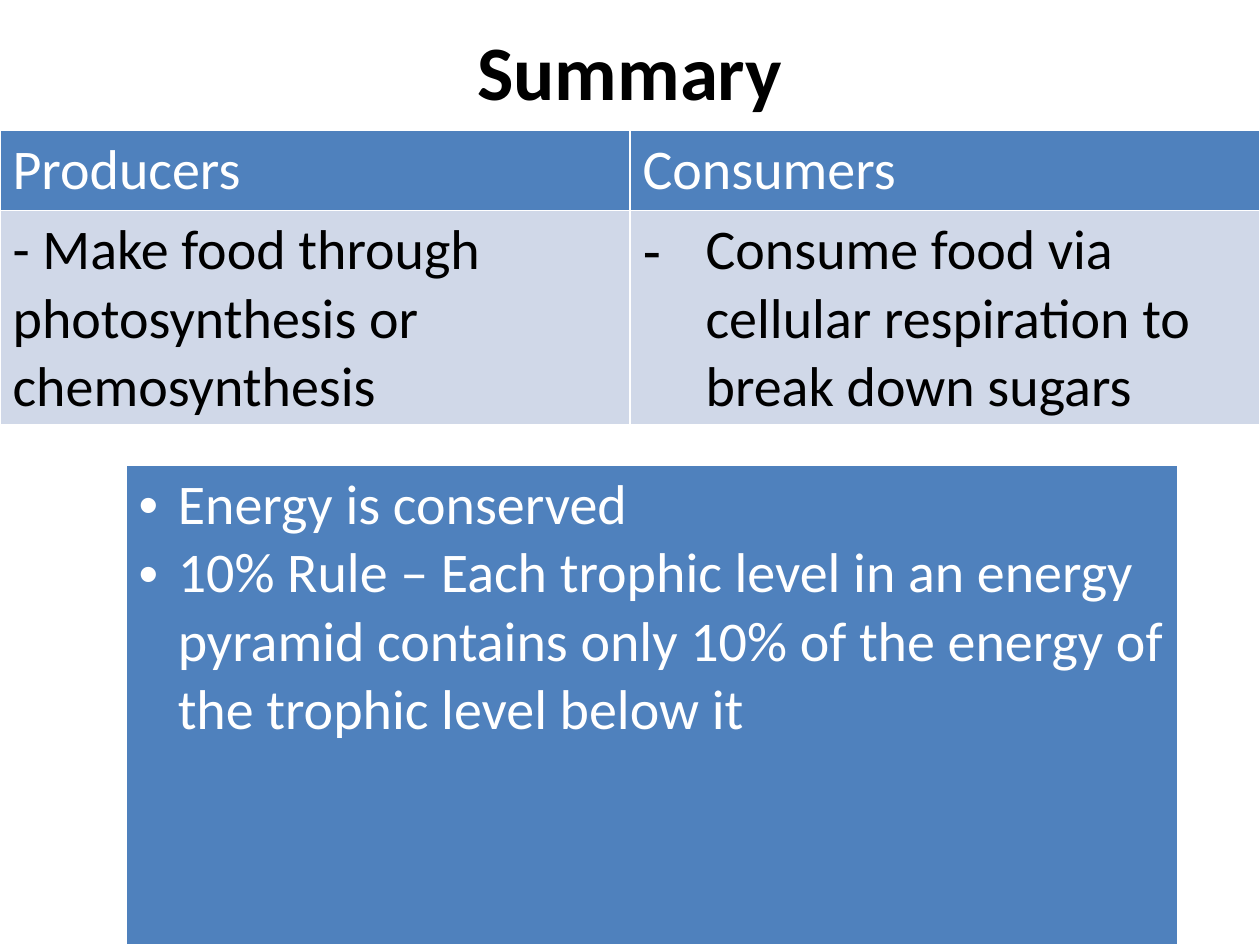
from dataclasses import dataclass

import pptx
import pptx.dml.color
import pptx.enum.text
import pptx.oxml.ns
import pptx.slide
import pptx.table
import pptx.text.text
import pptx.util
from lxml import etree

Cm = pptx.util.Cm
Pt = pptx.util.Pt
RGBColor = pptx.dml.color.RGBColor
qn = pptx.oxml.ns.qn

WHITE = RGBColor(0xFF, 0xFF, 0xFF)
BLACK = RGBColor(0, 0, 0)
BLUE = RGBColor(0x4F, 0x81, 0xBD)
PALE_BLUE = RGBColor(0xD0, 0xD8, 0xE8)
FONT = "Calibri"


@dataclass(frozen=True)
class Entry:
    lines: tuple[str, ...]
    fill: RGBColor
    color: RGBColor
    bullet: str = ""
    indent: float = 0


@dataclass(frozen=True)
class Grid:
    left: float
    top: float
    column_width: float
    row_heights: tuple[float, ...]
    rows: tuple[tuple[Entry, ...], ...]


COMPARISON = Grid(0, 2.62, 12.7, (1.62, 4.3), (
    (Entry(("Producers",), BLUE, WHITE), Entry(("Consumers",), BLUE, WHITE)),
    (
        Entry(("- Make food through photosynthesis or chemosynthesis",), PALE_BLUE, BLACK),
        Entry(("Consume food via cellular respiration to break down sugars",),
              PALE_BLUE, BLACK, "-", 1.27),
    ),
))
ENERGY_RULES = Grid(2.54, 9.37, 21.2, (9.68,), ((
    Entry((
        "Energy is conserved",
        "10% Rule – Each trophic level in an energy pyramid contains only 10% "
        "of the energy of the trophic level below it",
    ), BLUE, WHITE, "•", 0.79),
),))


def style_font(font: pptx.text.text.Font, size: float, color: RGBColor, bold: bool) -> None:
    font.name = FONT
    font.size = Pt(size)
    font.bold = bold
    font.color.rgb = color


def add_bullet(paragraph, bullet: str, indent: float) -> None:
    properties = paragraph._p.get_or_add_pPr()
    properties.set("marL", str(Cm(indent)))
    properties.set("indent", str(-Cm(indent)))
    etree.SubElement(properties, qn("a:buFont"), typeface="Arial")
    etree.SubElement(properties, qn("a:buChar"), char=bullet)


def add_borders(cell) -> None:
    properties = cell._tc.get_or_add_tcPr()
    for side in ("lnL", "lnR", "lnT", "lnB"):
        border = etree.SubElement(properties, qn(f"a:{side}"), w=str(Pt(1)))
        fill = etree.SubElement(border, qn("a:solidFill"))
        etree.SubElement(fill, qn("a:srgbClr"), val=str(WHITE))


def fill_cell(cell, entry: Entry) -> None:
    add_borders(cell)
    cell.fill.solid()
    cell.fill.fore_color.rgb = entry.fill
    cell.text = "\n".join(entry.lines)
    for paragraph in cell.text_frame.paragraphs:
        if entry.bullet:
            add_bullet(paragraph, entry.bullet, entry.indent)
        style_font(paragraph.font, 32, entry.color, False)


def add_grid(slide: pptx.slide.Slide, grid: Grid) -> None:
    column_count = len(grid.rows[0])
    table = slide.shapes.add_table(
        len(grid.rows), column_count, Cm(grid.left), Cm(grid.top),
        Cm(grid.column_width * column_count), Cm(sum(grid.row_heights)),
    ).table
    for column in table.columns:
        column.width = Cm(grid.column_width)
    for row, height, entries in zip(table.rows, grid.row_heights, grid.rows):
        row.height = Cm(height)
        for cell, entry in zip(row.cells, entries):
            fill_cell(cell, entry)


def add_title(slide: pptx.slide.Slide, wording: str) -> None:
    frame = slide.shapes.add_textbox(Cm(2.54), Cm(0.2), Cm(20.32), Cm(2.41)).text_frame
    frame.word_wrap = True
    frame.vertical_anchor = pptx.enum.text.MSO_ANCHOR.MIDDLE
    heading = frame.paragraphs[0]
    heading.text = wording
    heading.alignment = pptx.enum.text.PP_ALIGN.CENTER
    style_font(heading.font, 44, BLACK, True)


def main() -> None:
    deck = pptx.Presentation()
    deck.slide_width = Cm(25.4)
    deck.slide_height = Cm(19.05)
    summary = deck.slides.add_slide(deck.slide_layouts[6])
    add_title(summary, "Summary")
    for grid in (COMPARISON, ENERGY_RULES):
        add_grid(summary, grid)
    deck.save("out.pptx")


if __name__ == "__main__":
    main()
